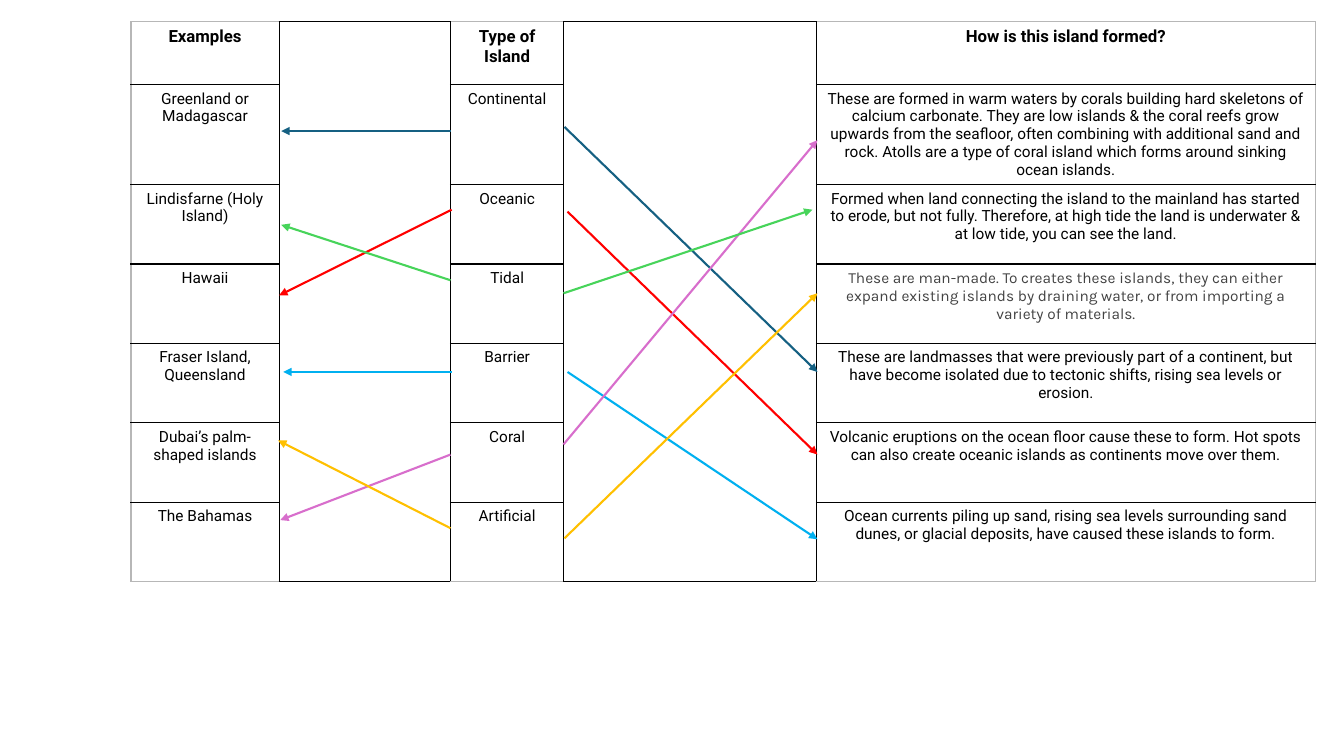
from dataclasses import dataclass

from lxml import etree
from pptx import Presentation
from pptx import util as u
from pptx.dml import color
from pptx.enum import shapes, text
from pptx.oxml import ns


@dataclass(frozen=True)
class Theme:
    font: str = "Roboto"
    accent_font: str = "Karla"
    ink: str = "000000"
    muted: str = "424242"
    frame: str = "B7B7B7"
    continental: str = "156082"
    oceanic: str = "FF0000"
    tidal: str = "47D45A"
    barrier: str = "00B0F0"
    coral: str = "D86ECC"
    artificial: str = "FFC000"
    header_size: float = 12
    body_size: float = 11
    border: float = 1
    arrow: float = 1.5


@dataclass(frozen=True)
class Island:
    example: str
    kind: str
    formation: str


@dataclass(frozen=True)
class Arrow:
    start: tuple[float, float]
    end: tuple[float, float]
    colour: str


THEME = Theme()
TABLE_LEFT, TABLE_TOP = 93.6, 15.5
COLUMN_WIDTHS = (105.8, 122.4, 81, 180.4, 356.4)
HEADER_HEIGHT, ROW_HEIGHT = 45, 56.7
GAP_COLUMNS = (1, 3)
KARLA_CELL = (3, 4)

ROWS = (
    Island("Examples", "Type of Island", "How is this island formed?"),
    Island("Greenland or Madagascar", "Continental",
           "These are formed in warm waters by corals building hard skeletons of calcium "
           "carbonate. They are low islands & the coral reefs grow upwards from the seafloor, "
           "often combining with additional sand and rock. Atolls are a type of coral island "
           "which forms around sinking ocean islands."),
    Island("Lindisfarne (Holy Island)", "Oceanic",
           "Formed when land connecting the island to the mainland has started to erode, but "
           "not fully. Therefore, at high tide the land is underwater & at low tide, you can "
           "see the land."),
    Island("Hawaii", "Tidal",
           "These are man-made. To creates these islands, they can either expand existing "
           "islands by draining water, or from importing a variety of materials."),
    Island("Fraser Island, Queensland", "Barrier",
           "These are landmasses that were previously part of a continent, but have become "
           "isolated due to tectonic shifts, rising sea levels or erosion."),
    Island("Dubai’s palm-shaped islands", "Coral",
           "Volcanic eruptions on the ocean floor cause these to form. Hot spots can also "
           "create oceanic islands as continents move over them."),
    Island("The Bahamas", "Artificial",
           "Ocean currents piling up sand, rising sea levels surrounding sand dunes, or "
           "glacial deposits, have caused these islands to form."),
)

ARROWS = (
    Arrow((403.2, 90.7), (583.9, 265.7), THEME.continental),
    Arrow((321.8, 93.6), (200.9, 93.6), THEME.continental),
    Arrow((405.4, 265.7), (583.9, 385.2), THEME.barrier),
    Arrow((322.6, 265.7), (202.3, 265.7), THEME.barrier),
    Arrow((405.4, 151.2), (583.9, 324.7), THEME.oceanic),
    Arrow((322.6, 149.8), (199.4, 211), THEME.oceanic),
    Arrow((402.5, 317.5), (583.9, 100.1), THEME.coral),
    Arrow((403.2, 384.5), (583.9, 209.5), THEME.artificial),
    Arrow((402.5, 209.5), (580.3, 149.8), THEME.tidal),
    Arrow((321.8, 200.2), (200.9, 160.6), THEME.tidal),
    Arrow((321.8, 324.7), (200.2, 371.5), THEME.coral),
    Arrow((321.8, 377.3), (198.7, 314.6), THEME.artificial),
)


def vertical_edge(edge: int) -> str:
    return THEME.frame if edge in (0, len(COLUMN_WIDTHS)) else THEME.ink


def horizontal_edge(edge: int, column: int) -> str | None:
    outer = edge in (0, len(ROWS))
    if column in GAP_COLUMNS:
        return THEME.ink if outer else None
    return THEME.frame if outer else THEME.ink


def set_borders(cell, row: int, column: int) -> None:
    edges = {
        "a:lnL": vertical_edge(column),
        "a:lnR": vertical_edge(column + 1),
        "a:lnT": horizontal_edge(row, column),
        "a:lnB": horizontal_edge(row + 1, column),
    }
    properties = cell._tc.get_or_add_tcPr()
    for position, (tag, colour) in enumerate(edges.items()):
        line = etree.Element(ns.qn(tag), w=str(u.Pt(THEME.border)))
        if colour:
            fill = etree.SubElement(line, ns.qn("a:solidFill"))
            etree.SubElement(fill, ns.qn("a:srgbClr"), val=colour)
        else:
            etree.SubElement(line, ns.qn("a:noFill"))
        properties.insert(position, line)


def write_cell(cell, content: str, row: int, column: int) -> None:
    accented = (row, column) == KARLA_CELL
    cell.text = content
    paragraph = cell.text_frame.paragraphs[0]
    paragraph.alignment = text.PP_ALIGN.CENTER
    font = paragraph.font
    font.name = THEME.accent_font if accented else THEME.font
    font.size = u.Pt(THEME.body_size if row else THEME.header_size)
    font.bold = row == 0
    font.color.rgb = color.RGBColor.from_string(THEME.muted if accented else THEME.ink)


def add_island_table(slide) -> None:
    height = HEADER_HEIGHT + ROW_HEIGHT * (len(ROWS) - 1)
    table = slide.shapes.add_table(
        len(ROWS), len(COLUMN_WIDTHS), u.Pt(TABLE_LEFT), u.Pt(TABLE_TOP),
        u.Pt(sum(COLUMN_WIDTHS)), u.Pt(height)).table
    table.first_row = False
    table.horz_banding = False
    for column, width in zip(table.columns, COLUMN_WIDTHS):
        column.width = u.Pt(width)
    for row, island in enumerate(ROWS):
        table.rows[row].height = u.Pt(ROW_HEIGHT if row else HEADER_HEIGHT)
        contents = (island.example, "", island.kind, "", island.formation)
        for column, content in enumerate(contents):
            cell = table.cell(row, column)
            cell.fill.background()
            set_borders(cell, row, column)
            write_cell(cell, content, row, column)


def add_arrow(slide, arrow: Arrow) -> None:
    connector = slide.shapes.add_connector(
        shapes.MSO_CONNECTOR.STRAIGHT, *map(u.Pt, arrow.start + arrow.end))
    connector.line.color.rgb = color.RGBColor.from_string(arrow.colour)
    connector.line.width = u.Pt(THEME.arrow)
    etree.SubElement(connector.line._get_or_add_ln(), ns.qn("a:tailEnd"), type="triangle")
    etree.SubElement(connector._element.spPr, ns.qn("a:effectLst"))


def main() -> None:
    presentation = Presentation()
    presentation.slide_width = u.Pt(960)
    presentation.slide_height = u.Pt(540)
    slide = presentation.slides.add_slide(presentation.slide_layouts[6])
    add_island_table(slide)
    for arrow in ARROWS:
        add_arrow(slide, arrow)
    presentation.save("out.pptx")


if __name__ == "__main__":
    main()
